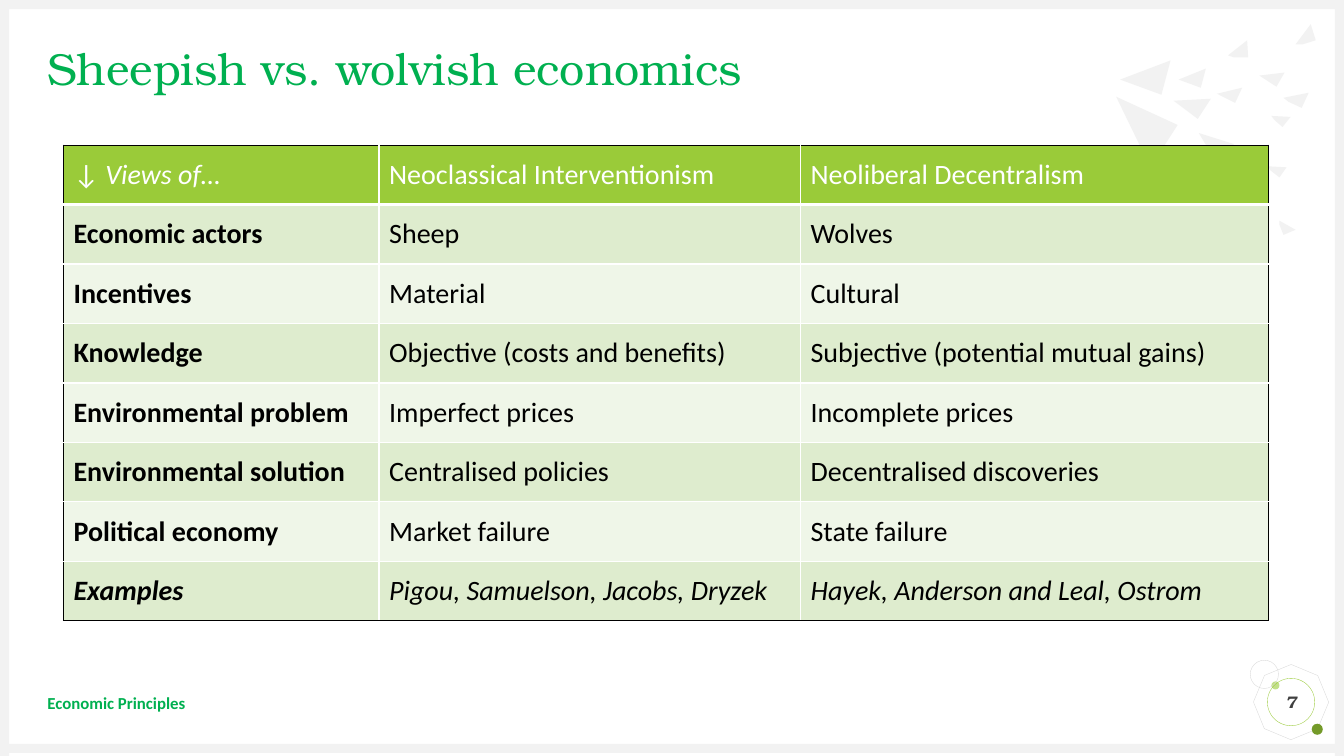
from lxml.etree import SubElement
from pptx import Presentation
from pptx.dml.color import RGBColor
from pptx.enum.shapes import MSO_SHAPE as Shape
from pptx.enum.text import MSO_ANCHOR as Anchor, PP_ALIGN as Align
from pptx.oxml.ns import qn
from pptx.util import Inches, Pt

SANS, SERIF = "Calibri", "TeX Gyre Bonum"
GREEN, LIME, PALE, GREY = "00B050", "9ACB39", "F2F2F2", "D9D9D9"
BANDS = ["DEECCE", "EFF6E8"]

SHARDS = [
    [(11.61, 0.6), (11.52, 0.94), (11.11, 0.79)],
    [(12.01, 0.98), (11.88, 1.18), (11.64, 1)],
    [(11.96, 0.68), (11.91, 0.87), (11.69, 0.79)],
    [(12.32, 0.87), (12.25, 1.02), (12.07, 0.93)],
    [(12.37, 0.4), (12.38, 0.57), (12.24, 0.57), (12.18, 0.55)],
    [(12.8, 1.16), (12.72, 1.26), (12.64, 1.19), (12.61, 1.15)],
    [(13, 0.24), (13.05, 0.4), (12.92, 0.44), (12.85, 0.44)],
    [(12.74, 0.72), (12.66, 0.86), (12.49, 0.75)],
    [(12.98, 0.92), (12.91, 1.07), (12.78, 1.01), (12.73, 0.97)],
    [(11.68, 1.24), (11.41, 1.66), (11.07, 0.96)],
    [(12.24, 1.43), (12.04, 1.57), (11.89, 1.32)],
    [(12.76, 1.66), (12.69, 1.76), (12.6, 1.69), (12.58, 1.65)],
    [(11.6, 1.94), (11.37, 2.01), (11.31, 1.71)],
    [(12.85, 2.28), (12.73, 2.33), (12.69, 2.23), (12.69, 2.19)],
]

COLUMNS = [3.13, 4.18, 4.64]
ROW_HEIGHT = 0.59
VIEWS = [
    ("↓ Views of…", "Neoclassical Interventionism", "Neoliberal Decentralism"),
    ("Economic actors", "Sheep", "Wolves"),
    ("Incentives", "Material", "Cultural"),
    ("Knowledge", "Objective (costs and benefits)", "Subjective (potential mutual gains)"),
    ("Environmental problem", "Imperfect prices", "Incomplete prices"),
    ("Environmental solution", "Centralised policies", "Decentralised discoveries"),
    ("Political economy", "Market failure", "State failure"),
    ("Examples", "Pigou, Samuelson, Jacobs, Dryzek", "Hayek, Anderson and Leal, Ostrom"),
]


def colour(value):
    return RGBColor.from_string(value)


def add_span(para, text, size, font, tint, bold=False, italic=False):
    span = para.add_run()
    span.text = text
    span.font.size, span.font.name = Pt(size), font
    span.font.bold, span.font.italic = bold, italic
    span.font.color.rgb = colour(tint)


def set_frame(shape):
    """Remove the insets, centre the text vertically and return its paragraph."""
    frame = shape.text_frame
    frame.word_wrap = True
    frame.vertical_anchor = Anchor.MIDDLE
    frame.margin_left = frame.margin_right = frame.margin_top = frame.margin_bottom = 0
    return frame.paragraphs[0]


def paint(shape, fill=None, line=None):
    shape.shadow.inherit = False
    if fill:
        shape.fill.solid()
        shape.fill.fore_color.rgb = colour(fill)
    else:
        shape.fill.background()
    if line:
        shape.line.color.rgb = colour(line)
        shape.line.width = Pt(0.25)
    else:
        shape.line.fill.background()


def add_preset(page, kind, left, top, width, height, fill=None, line=None):
    shape = page.shapes.add_shape(kind, Inches(left), Inches(top), Inches(width), Inches(height))
    paint(shape, fill, line)
    return shape


def add_shard(page, points):
    corners = [(Inches(x), Inches(y)) for x, y in points]
    builder = page.shapes.build_freeform(*corners[0])
    builder.add_line_segments(corners[1:], close=True)
    paint(builder.convert_to_shape(), PALE)


def add_border(cell, side, tint, width):
    line = SubElement(cell._tc.get_or_add_tcPr(), qn(f"a:ln{side}"), w=str(Pt(width)))
    fill = SubElement(line, qn("a:solidFill"))
    SubElement(fill, qn("a:srgbClr"), val=tint)


def add_views_table(page):
    last_row, last_column = len(VIEWS) - 1, len(COLUMNS) - 1
    table = page.shapes.add_table(
        len(VIEWS), len(COLUMNS), Inches(0.63), Inches(1.44),
        Inches(sum(COLUMNS)), Inches(ROW_HEIGHT * len(VIEWS))).table
    table.first_row = table.horz_banding = False
    for column, width in zip(table.columns, COLUMNS):
        column.width = Inches(width)

    for r, texts in enumerate(VIEWS):
        table.rows[r].height = Inches(ROW_HEIGHT)
        for c, text in enumerate(texts):
            cell = table.cell(r, c)
            cell.vertical_anchor = Anchor.MIDDLE

            # Black outer edges, white inner rules
            outer = {"L": c == 0, "R": c == last_column, "T": r == 0, "B": r == last_row}
            for side, is_outer in outer.items():
                width = 3 if r == 0 and side == "B" else 1
                add_border(cell, side, "000000" if is_outer else "FFFFFF", width)
            cell.fill.solid()
            cell.fill.fore_color.rgb = colour(BANDS[(r - 1) % 2] if r else LIME)

            # The arrow stays upright beside its italic label
            para = cell.text_frame.paragraphs[0]
            tint = "000000" if r else "FFFFFF"
            if r == 0 and c == 0:
                add_span(para, text[:2], 20, SANS, tint)
                text = text[2:]
            add_span(para, text, 20, SANS, tint, bold=r > 0 and c == 0,
                     italic=r == last_row or r == c == 0)


def add_decoration(page):
    # Ornaments around the page number
    octagon = add_preset(page, Shape.OCTAGON, 12.46, 6.62, 0.69, 0.69, line=GREY)
    octagon.rotation = 22.7
    add_preset(page, Shape.OVAL, 12.61, 6.76, 0.08, 0.08, "C2E088")
    add_preset(page, Shape.OVAL, 13.01, 7.18, 0.11, 0.11, "749A29")
    add_preset(page, Shape.OVAL, 12.4, 6.55, 0.28, 0.28, line=GREY)

    # Frame along the page edges
    for left, top, width, height in [(0.03, 7.38, 13.33, 0.09), (0, 0, 13.33, 0.09),
                                     (0, 0, 0.09, 7.5), (13.24, 0, 0.09, 7.5)]:
        add_preset(page, Shape.RECTANGLE, left, top, width, height, PALE)

    for points in SHARDS:
        add_shard(page, points)


def add_title(page, text):
    title = page.shapes.title
    title.left, title.top = Inches(0.47), Inches(0.47)
    title.width, title.height = Inches(12.4), Inches(0.47)
    para = set_frame(title)
    para.alignment, para.line_spacing = Align.LEFT, 0.9
    add_span(para, text, 32, SERIF, GREEN)


def add_footer(page, text, number):
    box = page.shapes.add_textbox(Inches(0.47), Inches(6.77), Inches(9.61), Inches(0.4))
    add_span(set_frame(box), text, 12, SANS, GREEN, bold=True)
    badge = add_preset(page, Shape.OVAL, 12.57, 6.73, 0.47, 0.47, line=LIME)
    para = set_frame(badge)
    para.alignment = Align.CENTER
    add_span(para, number, 12, SERIF, "404040", bold=True, italic=True)


def main():
    deck = Presentation()
    deck.slide_width, deck.slide_height = Inches(13.33), Inches(7.5)
    page = deck.slides.add_slide(deck.slide_layouts.get_by_name("Title Only"))
    add_decoration(page)
    add_title(page, "Sheepish vs. wolvish economics")
    add_footer(page, "Economic Principles", "7")
    add_views_table(page)
    deck.save("out.pptx")


if __name__ == "__main__":
    main()
